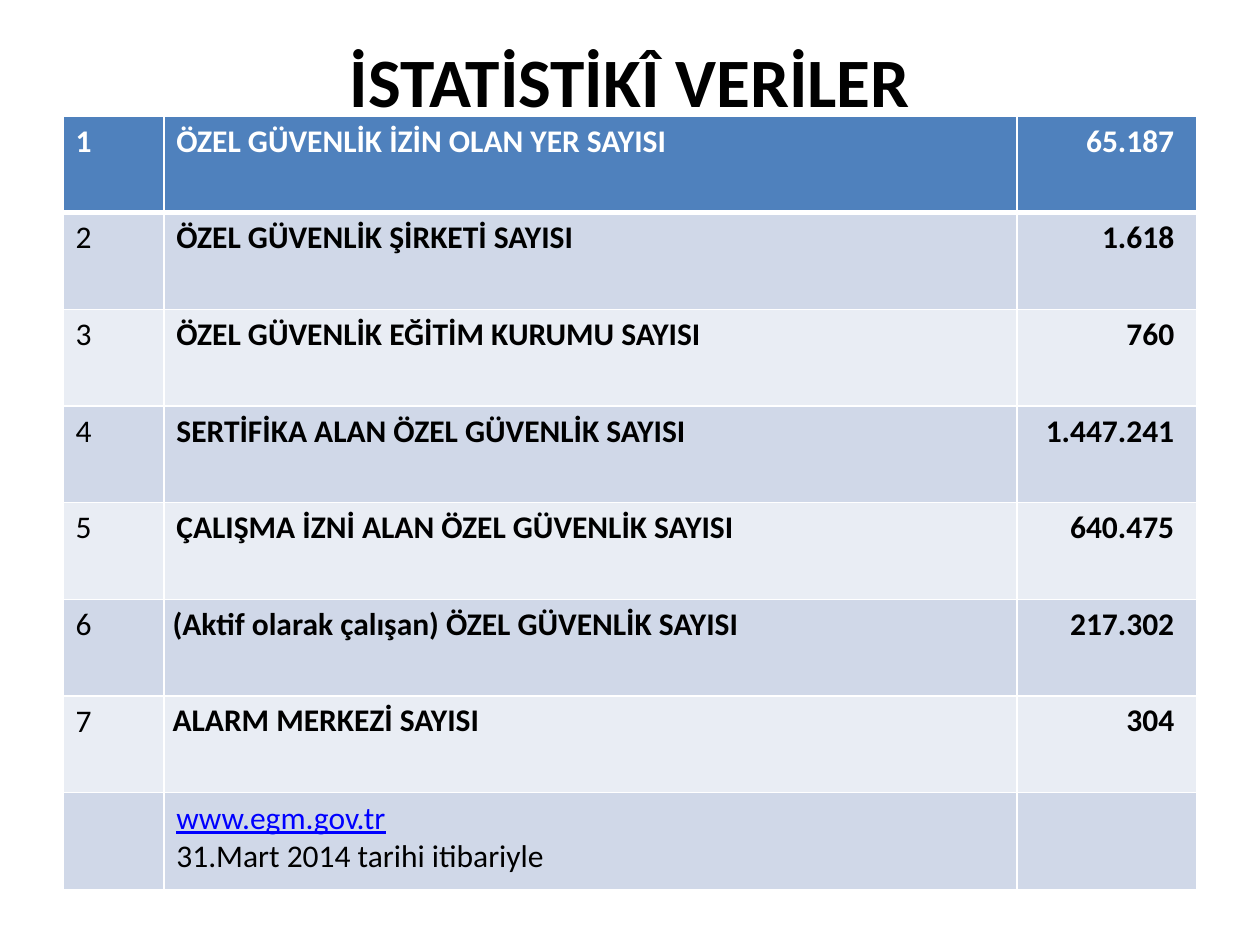
from dataclasses import dataclass

from lxml import etree
from pptx import Presentation
from pptx import util as u
from pptx.dml.color import RGBColor
from pptx.enum import text
from pptx.oxml.ns import qn


@dataclass(frozen=True)
class Theme:
    font: str = "Calibri"
    title_size: float = 39.6
    body_size: float = 18
    ink: str = "000000"
    paper: str = "FFFFFF"
    link: str = "0000FF"
    header: str = "4F81BD"
    bands: tuple = ("E9EDF4", "D0D8E8")
    rule: float = 1
    header_rule: float = 3


def apply(target, values):
    for name, value in values.items():
        setattr(target, name, value)


class StatisticsSlide:
    def __init__(self, presentation, theme):
        self.presentation = presentation
        self.theme = theme
        self.slide = presentation.slides.add_slide(presentation.slide_layouts[5])

    def box(self, left, top, width, height):
        """Turn shares of the slide's size into lengths."""
        across, down = self.presentation.slide_width, self.presentation.slide_height
        return dict(left=round(left * across), top=round(top * down),
                    width=round(width * across), height=round(height * down))

    def add_text(self, paragraph, wording, color, **values):
        run = paragraph.add_run()
        run.text = wording
        style = dict(name=self.theme.font, size=u.Pt(self.theme.body_size), bold=False)
        apply(run.font, style | values)
        run.font.color.rgb = RGBColor.from_string(color)

    def title(self, wording, **place):
        shape = self.slide.shapes.title
        apply(shape, self.box(**place))
        apply(shape.text_frame, dict(vertical_anchor=text.MSO_ANCHOR.TOP,
                                     margin_top=0, word_wrap=True))
        paragraph = shape.text_frame.paragraphs[0]
        paragraph.alignment = text.PP_ALIGN.CENTER
        self.add_text(paragraph, wording, self.theme.ink,
                      size=u.Pt(self.theme.title_size), bold=True)

    def borders(self, cell, row):
        properties = cell._tc.get_or_add_tcPr()
        thick = {0: "lnB", 1: "lnT"}.get(row)
        for side in ("lnL", "lnR", "lnT", "lnB"):
            width = self.theme.header_rule if side == thick else self.theme.rule
            line = etree.SubElement(properties, qn(f"a:{side}"), w=str(u.Pt(width)))
            fill = etree.SubElement(line, qn("a:solidFill"))
            etree.SubElement(fill, qn("a:srgbClr"), val=self.theme.paper)

    def table(self, rows, column_shares, **place):
        area = self.box(**place)
        table = self.slide.shapes.add_table(len(rows), len(column_shares), **area).table
        for column, share in zip(table.columns, column_shares):
            column.width = round(area["width"] * share)
        for r, row in enumerate(rows):
            fill = self.theme.bands[r % 2] if r else self.theme.header
            color = self.theme.ink if r else self.theme.paper
            for c, lines in enumerate(row):
                cell = table.cell(r, c)
                self.borders(cell, r)
                cell.fill.solid()
                cell.fill.fore_color.rgb = RGBColor.from_string(fill)
                self.fill_cell(cell, lines, color, bold=r == 0 or c > 0,
                               compact=r in COMPACT_ROWS and c > 0, number=c == 2)

    def fill_cell(self, cell, lines, color, bold, compact, number):
        if compact:
            apply(cell, dict(margin_left=u.Inches(0.07), margin_right=u.Inches(0.07),
                             margin_top=0, margin_bottom=0))
        if number:
            cell.margin_right = u.Inches(0.18)
        for i, wording in enumerate(lines.split("\n") if lines else ()):
            frame = cell.text_frame
            paragraph = frame.add_paragraph() if i else frame.paragraphs[0]
            if number:
                paragraph.alignment = text.PP_ALIGN.RIGHT
            if compact:
                paragraph.line_spacing = 1.15
            if wording == WEB_ADDRESS:
                self.add_text(paragraph, wording, self.theme.link, underline=True)
            else:
                self.add_text(paragraph, wording, color,
                              bold=bold and WEB_ADDRESS not in lines)


WEB_ADDRESS = "www.egm.gov.tr"
COMPACT_ROWS = (5, 6)
STATISTICS = [
    ("ÖZEL GÜVENLİK İZİN OLAN YER SAYISI", "65.187"),
    ("ÖZEL GÜVENLİK ŞİRKETİ SAYISI", "1.618"),
    ("ÖZEL GÜVENLİK EĞİTİM KURUMU SAYISI", "760"),
    ("SERTİFİKA ALAN ÖZEL GÜVENLİK SAYISI", "1.447.241"),
    ("ÇALIŞMA İZNİ ALAN ÖZEL GÜVENLİK SAYISI", "640.475"),
    ("(Aktif olarak çalışan) ÖZEL GÜVENLİK SAYISI", "217.302"),
    ("ALARM MERKEZİ SAYISI", "304"),
]


def main():
    presentation = Presentation()
    apply(presentation, dict(slide_width=u.Inches(10), slide_height=u.Inches(7.5)))
    page = StatisticsSlide(presentation, Theme())
    page.title("İSTATİSTİKÎ VERİLER", left=0.05, top=0.3 / 7.5, width=0.9, height=1.25 / 7.5)
    rows = [(str(n), *entry) for n, entry in enumerate(STATISTICS, 1)]
    rows.append(("", f"{WEB_ADDRESS}\n31.Mart 2014 tarihi itibariyle", ""))
    page.table(rows, (0.8 / 9, 6.77 / 9, 1.43 / 9),
               left=0.05, top=0.92 / 7.5, width=0.9, height=6.14 / 7.5)
    presentation.save("out.pptx")


if __name__ == "__main__":
    main()
